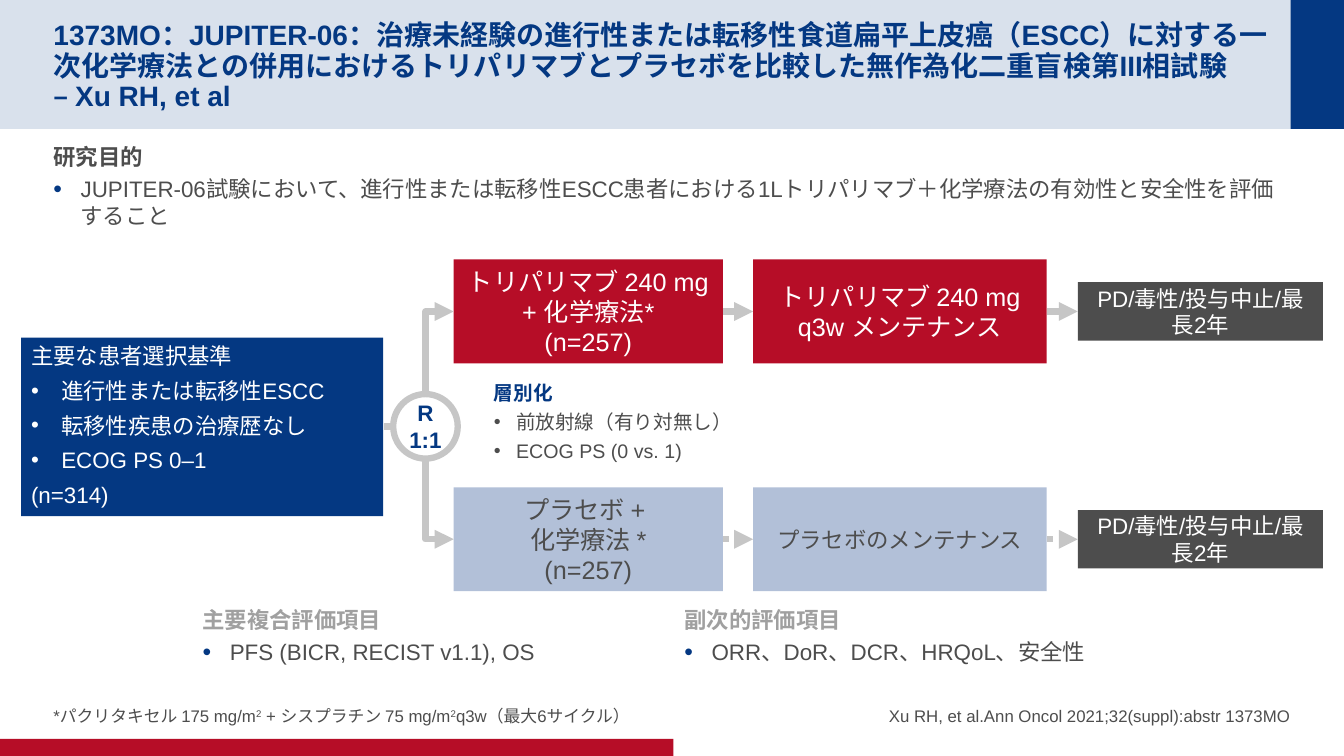
from lxml.etree import SubElement
from pptx import Presentation
from pptx.dml.color import RGBColor
from pptx.enum.dml import MSO_LINE
from pptx.enum.shapes import MSO_CONNECTOR, MSO_SHAPE
from pptx.enum.text import MSO_ANCHOR, MSO_AUTO_SIZE, PP_ALIGN
from pptx.oxml.ns import qn
from pptx.util import Inches, Pt

# Content
NAVY, RED, PALE = "043882", "B60D27", "B2C0D8"
DARK, GREY, LINE, WHITE = "4D4D4D", "A0A0A0", "C6C6C6", "FFFFFF"

TITLE = ("1373MO：JUPITER-06：治療未経験の進行性または転移性食道扁平上皮癌（ESCC）に対する"
         "一次化学療法との併用におけるトリパリマブとプラセボを比較した無作為化二重盲検第III相試験\n"
         "– Xu RH, et al")
AIM = ("研究目的", ["JUPITER-06試験において、進行性または転移性ESCC患者における"
                "1Lトリパリマブ＋化学療法の有効性と安全性を評価すること"])
PRIMARY = ("主要複合評価項目", ["PFS (BICR, RECIST v1.1), OS"])
SECONDARY = ("副次的評価項目", ["ORR、DoR、DCR、HRQoL、安全性"])
STRATA = ("層別化", ["前放射線（有り対無し）", "ECOG PS (0 vs. 1)"])
CRITERIA = ("主要な患者選択基準",
            ["進行性または転移性ESCC", "転移性疾患の治療歴なし", "ECOG PS 0–1"], "(n=314)")
DOSING = ["*パクリタキセル 175 mg/m", "2", " + シスプラチン 75 mg/m", "2", "q3w（最大6サイクル）"]
CITATION = "Xu RH, et al.Ann Oncol 2021;32(suppl):abstr 1373MO"
STOP = "PD/毒性/投与中止/最長2年"
# centre line, fill, text colour, dash, treatment, maintenance, maintenance size
ARMS = [
    (3.09, RED, WHITE, None, "トリパリマブ 240 mg + 化学療法*\n(n=257)",
     "トリパリマブ 240 mg q3w メンテナンス", 18),
    (5.35, PALE, DARK, MSO_LINE.ROUND_DOT, "プラセボ + \n化学療法 *\n(n=257)",
     "プラセボのメンテナンス", 16),
]
# left, width, height of each column of the flow
COLUMNS = [(4.5, 2.67, 1.03), (7.47, 2.91, 1.03), (10.69, 2.43, 0.58)]
HUB_X, HUB_Y, HUB_R = 4.22, 4.23, 0.32

prs = Presentation()
prs.slide_width, prs.slide_height = Inches(13.33), Inches(7.5)
s = prs.slides.add_slide(prs.slide_layouts[1])


def rgb(color):
    return RGBColor.from_string(color)


def frame(sp, insets=(0.1, 0.05, 0.1, 0.05), anchor=MSO_ANCHOR.TOP, wrap=True):
    tf = sp.text_frame
    tf.auto_size, tf.word_wrap, tf.vertical_anchor = MSO_AUTO_SIZE.NONE, wrap, anchor
    tf.margin_left, tf.margin_top, tf.margin_right, tf.margin_bottom = map(Inches, insets)
    return tf


def run(p, text, size, color, bold=False):
    for i, part in enumerate(text.split("\n")):
        if i:
            p.add_line_break()
        r = p.add_run()
        r.text = part
        r.font.name, r.font.size, r.font.bold = "Arial", Pt(size), bold
        r.font.color.rgb = rgb(color)
    return r


def paragraph(tf, align=PP_ALIGN.LEFT, after=0, bullet=None, indent=0.0):
    """Add a paragraph; bullet is None or a (colour, percent) pair."""
    first = tf.paragraphs[0]
    p = tf.add_paragraph() if first.runs else first
    p.alignment, p.space_before, p.space_after = align, Pt(0), Pt(after)
    pPr = p._p.get_or_add_pPr()
    pPr.set("marL", str(Inches(indent)))
    pPr.set("indent", str(-Inches(indent)))
    if bullet:
        color, percent = bullet
        SubElement(SubElement(pPr, qn("a:buClr")), qn("a:srgbClr"), val=color)
        SubElement(pPr, qn("a:buSzPct"), val=str(percent * 1000))
        SubElement(pPr, qn("a:buFont"), typeface="Arial")
        SubElement(pPr, qn("a:buChar"), char="•")
    else:
        SubElement(pPr, qn("a:buNone"))
    return p


def section(tf, content, head, color, size=16, bold=True, after=4,
            bullet=(NAVY, 110), indent=0.27):
    run(paragraph(tf, after=after), content[0], size, head, bold)
    for item in content[1]:
        run(paragraph(tf, after=after, bullet=bullet, indent=indent), item, size, color)


def textbox(*box):
    return s.shapes.add_textbox(*map(Inches, box))


def place(sp, *box):
    sp.left, sp.top, sp.width, sp.height = map(Inches, box)


def shape(box, fill=None, kind=MSO_SHAPE.RECTANGLE):
    sp = s.shapes.add_shape(kind, *map(Inches, box))
    sp.shadow.inherit = False
    sp.line.fill.background()
    if fill:
        sp.fill.solid()
        sp.fill.fore_color.rgb = rgb(fill)
    else:
        sp.fill.background()
    return sp


def box_label(box, fill, text, size, color):
    tf = frame(shape(box, fill), (0.1, 0, 0.1, 0), MSO_ANCHOR.MIDDLE)
    run(paragraph(tf, PP_ALIGN.CENTER), text, size, color)


def connect(x1, y1, x2, y2, end=None, dash=None, kind=MSO_CONNECTOR.STRAIGHT):
    c = s.shapes.add_connector(kind, *map(Inches, (x1, y1, x2, y2)))
    c.line.color.rgb, c.line.width = rgb(LINE), Pt(4.5)
    if dash:
        c.line.dash_style = dash
    spPr = c._element.spPr
    if end:
        SubElement(spPr.find(qn("a:ln")), qn(end), type="triangle")
    SubElement(spPr, qn("a:effectLst"))
    return c


# Bands, placed behind the placeholders
bands = [shape((0, 0, 13.33, 1.28), NAVY), shape((12.8, 0, 0.53, 1.28), NAVY),
         shape((0, 7.33, 6.68, 0.17), RED)]
SubElement(bands[0]._element.spPr.find(qn("a:solidFill"))[0], qn("a:alpha"), val="15000")
for i, band in enumerate(bands):
    s.shapes._spTree.insert(2 + i, band._element)

# Title and aim
title, body = s.placeholders
place(title, 0.53, 0.2, 12.27, 0.88)
p = paragraph(frame(title, (0, 0.05, 0, 0), MSO_ANCHOR.MIDDLE))
p.line_spacing = 0.9
run(p, TITLE, 20, NAVY, True)
place(body, 0.53, 1.37, 12.27, 1.1)
section(frame(body, (0, 0.05, 0, 0.05)), AIM, DARK, DARK)

# Patient criteria
tf = frame(shape((0.21, 3.35, 3.59, 1.77), NAVY))
section(tf, CRITERIA, WHITE, WHITE, bold=False, after=5.5, bullet=(WHITE, 100), indent=0.3)
run(paragraph(tf), CRITERIA[2], 16, WHITE)

# Randomisation
connect(3.81, HUB_Y, HUB_X - HUB_R, HUB_Y)
hub = shape((HUB_X - HUB_R, HUB_Y - HUB_R, 2 * HUB_R, 2 * HUB_R), kind=MSO_SHAPE.OVAL)
hub.line.color.rgb, hub.line.width = rgb(LINE), Pt(4.5)
tf = frame(hub, anchor=MSO_ANCHOR.MIDDLE, wrap=False)
for text in ("R", "1:1"):
    run(paragraph(tf, PP_ALIGN.CENTER), text, 16, NAVY, True)

# Treatment arms
for y, fill, color, dash, treatment, maintenance, size in ARMS:
    labels = [(fill, treatment, 18, color), (fill, maintenance, size, color),
              (DARK, STOP, 16, WHITE)]
    for (left, width, height), label in zip(COLUMNS, labels):
        box_label((left, y - height / 2, width, height), *label)
    for (left, width, _), (target, _, _) in zip(COLUMNS, COLUMNS[1:]):
        connect(left + width, y, target, y, "a:tailEnd", dash)
    edge = HUB_Y + (HUB_R if y > HUB_Y else -HUB_R)
    elbow = connect(COLUMNS[0][0], y, HUB_X, edge, "a:headEnd", kind=MSO_CONNECTOR.ELBOW)
    elbow._element.spPr.find(qn("a:prstGeom")).set("prst", "bentConnector2")

# Stratification and endpoints
section(frame(textbox(4.8, 3.73, 3.28, 0.98)), STRATA, NAVY, DARK, size=14,
        bullet=(DARK, 100), indent=0.22)
section(frame(textbox(2.01, 5.96, 4.52, 0.77), (0, 0.05, 0, 0.05)), PRIMARY, GREY, DARK)
section(frame(textbox(6.69, 5.96, 4.86, 0.73)), SECONDARY, GREY, DARK)

# Footnotes
p = paragraph(frame(textbox(0.53, 6.67, 7.43, 0.53), (0, 0, 0, 0), MSO_ANCHOR.BOTTOM), after=4)
for text in DOSING:
    r = run(p, text, 12, DARK)
    if text == "2":
        r._r.get_or_add_rPr().set("baseline", "30000")
tf = frame(textbox(6.78, 6.67, 6.02, 0.53), (0, 0, 0, 0), MSO_ANCHOR.BOTTOM)
run(paragraph(tf, PP_ALIGN.RIGHT, after=4), CITATION, 12, DARK)

prs.save("out.pptx")
